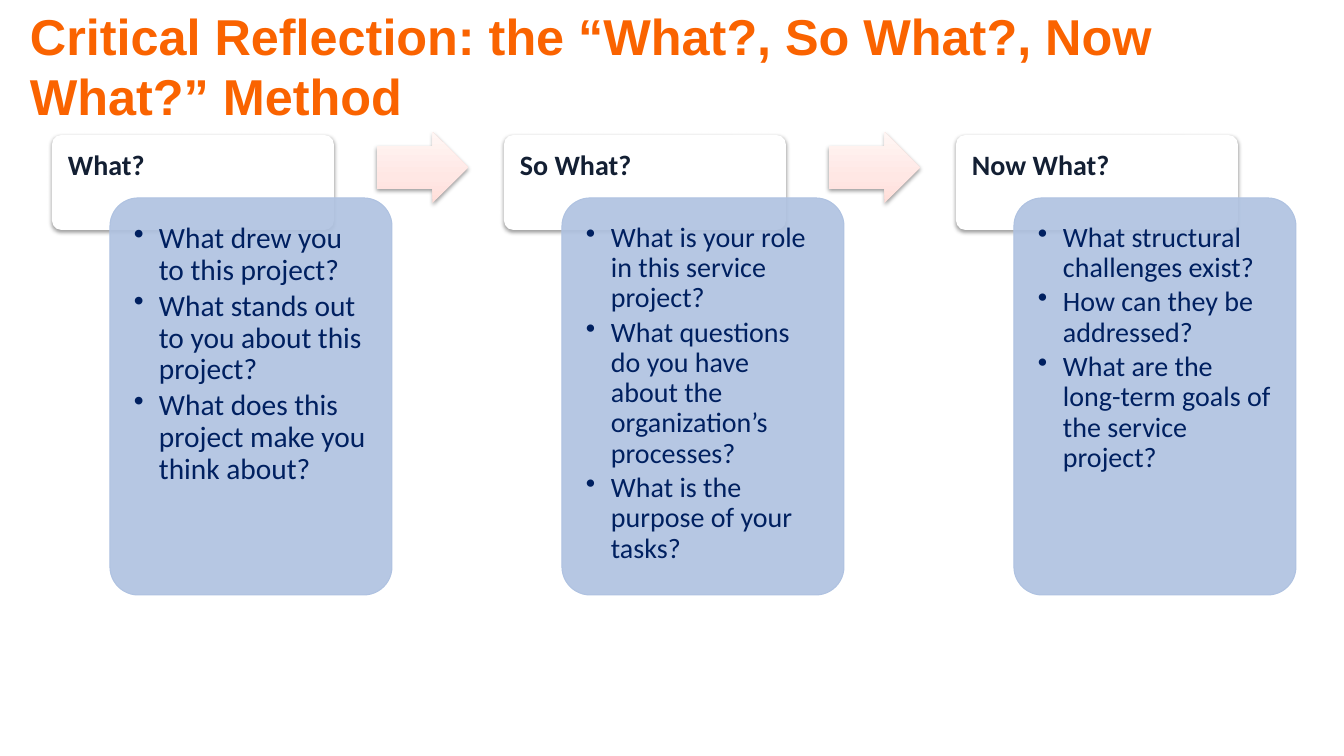
from dataclasses import dataclass

from lxml import etree
from pptx import Presentation
from pptx.dml.color import RGBColor
from pptx.enum.shapes import MSO_SHAPE
from pptx.enum.text import MSO_AUTO_SIZE
from pptx.oxml.ns import qn
from pptx.util import Emu, Pt

ROUNDED = MSO_SHAPE.ROUNDED_RECTANGLE
RIGHT_ARROW = MSO_SHAPE.RIGHT_ARROW
GROW = MSO_AUTO_SIZE.SHAPE_TO_FIT_TEXT

EMU_PER_PX = 914400 / 100.8
COLUMN_PITCH = 452
INSET = 16
INDENT = 25


@dataclass(frozen=True)
class Theme:
    title_font: str = "Arial"
    body_font: str = "Calibri"
    title_size: int = 36
    heading_size: int = 20
    title_color: str = "FA6300"
    heading_color: str = "131F33"
    question_color: str = "002060"
    card_color: str = "FFFFFF"
    panel_color: str = "AFC2E1"
    shadow_color: str = "000000"
    arrow_stops: tuple = ((0, "FFDED9"), (35, "FFE7E4"), (100, "FFF6F4"))


THEME = Theme()
TITLE = "Critical Reflection: the “What?, So What?, Now What?” Method"
# Heading, question size in points, questions
COLUMNS = (
    ("What?", 21, (
        "What drew you to this project?",
        "What stands out to you about this project?",
        "What does this project make you think about?",
    )),
    ("So What?", 20, (
        "What is your role in this service project?",
        "What questions do you have about the organization’s processes?",
        "What is the purpose of your tasks?",
    )),
    ("Now What?", 20, (
        "What structural challenges exist?",
        "How can they be addressed?",
        "What are the long-term goals of the service project?",
    )),
)


def px(length):
    return Emu(round(length * EMU_PER_PX))


def rgb(color):
    return RGBColor.from_string(color)


def add_element(parent, tag, **attributes):
    values = {name: str(value) for name, value in attributes.items()}
    return etree.SubElement(parent, qn(tag), values)


def set_font(paragraph, name, size, color, bold=False):
    font = paragraph.font
    font.name = name
    font.size = Pt(size)
    font.color.rgb = rgb(color)
    font.bold = bold


def add_text_box(slide, left, top, width, height):
    text_box = slide.shapes.add_textbox(px(left), px(top), px(width), px(height))
    text_box.text_frame.word_wrap = True
    return text_box.text_frame


def set_insets(frame, bottom):
    frame.margin_left = frame.margin_top = frame.margin_right = px(INSET)
    frame.margin_bottom = px(bottom)


def add_shape(slide, preset, left, top, width, height, adjustments):
    shape = slide.shapes.add_shape(preset, px(left), px(top), px(width), px(height))
    shape.shadow.inherit = False
    shape.line.fill.background()
    for index, value in enumerate(adjustments):
        shape.adjustments[index] = value
    return shape


def add_shadow(shape):
    """Add a soft shadow that falls straight down."""
    effects = shape._element.spPr.find(qn("a:effectLst"))
    shadow = add_element(effects, "a:outerShdw", blurRad=Pt(3.1), dist=Pt(1.6),
                         dir=5400000, algn="ctr", rotWithShape=0)
    color = add_element(shadow, "a:srgbClr", val=THEME.shadow_color)
    add_element(color, "a:alpha", val=38000)


def add_title(slide):
    frame = add_text_box(slide, 20, 0, 1245, 132)
    frame.auto_size = GROW
    paragraph = frame.paragraphs[0]
    paragraph.text = TITLE
    set_font(paragraph, THEME.title_font, THEME.title_size, THEME.title_color, True)


def add_heading_card(slide, left, heading):
    card = add_shape(slide, ROUNDED, left, 135, 282, 95, [0.1])
    card.fill.solid()
    card.fill.fore_color.rgb = rgb(THEME.card_color)
    add_shadow(card)

    frame = add_text_box(slide, left, 135, 282, 63)
    set_insets(frame, INSET // 2)
    paragraph = frame.paragraphs[0]
    paragraph.text = heading
    paragraph.line_spacing = 0.9
    set_font(paragraph, THEME.body_font, THEME.heading_size, THEME.heading_color, True)


def add_bullet(paragraph):
    """Give the paragraph a hanging bullet and relative space after."""
    properties = paragraph._p.get_or_add_pPr()
    properties.set("marL", str(px(INDENT)))
    properties.set("indent", str(-px(INDENT)))
    space_after = add_element(properties, "a:spcAft")
    add_element(space_after, "a:spcPct", val=15000)
    add_element(properties, "a:buChar", char="•")


def add_question_panel(slide, left, size, questions):
    panel = add_shape(slide, ROUNDED, left, 198, 282, 397, [0.1])
    panel.fill.solid()
    panel.fill.fore_color.rgb = rgb(THEME.panel_color)
    color = panel._element.spPr.find(qn("a:solidFill")).find(qn("a:srgbClr"))
    add_element(color, "a:alpha", val=90000)
    panel.line.color.rgb = rgb(THEME.panel_color)
    panel.line.width = Pt(0.75)

    frame = add_text_box(slide, left + 8, 207, 265, 380)
    set_insets(frame, INSET)
    for index, question in enumerate(questions):
        paragraph = frame.add_paragraph() if index else frame.paragraphs[0]
        paragraph.text = question
        paragraph.level = 1
        add_bullet(paragraph)
        paragraph.line_spacing = 0.9
        set_font(paragraph, THEME.body_font, size, THEME.question_color)


def add_arrow(slide, left):
    arrow = add_shape(slide, RIGHT_ARROW, left, 132, 91, 71, [0.6, 0.5])
    arrow.fill.gradient()
    arrow.fill.gradient_angle = 90
    stops = arrow._element.spPr.find(qn("a:gradFill")).find(qn("a:gsLst"))
    for stop in list(stops):
        stops.remove(stop)
    for position, color in THEME.arrow_stops:
        stop = add_element(stops, "a:gs", pos=position * 1000)
        add_element(stop, "a:srgbClr", val=color)
    add_shadow(arrow)


def main():
    presentation = Presentation()
    presentation.slide_width = px(1344)
    presentation.slide_height = px(756)
    slide = presentation.slides.add_slide(presentation.slide_layouts[6])

    add_title(slide)
    for index, (heading, size, questions) in enumerate(COLUMNS):
        left = 52 + index * COLUMN_PITCH
        add_heading_card(slide, left, heading)
        add_question_panel(slide, left + 58, size, questions)
        if index < len(COLUMNS) - 1:
            add_arrow(slide, left + 325)

    presentation.save("out.pptx")


if __name__ == "__main__":
    main()
